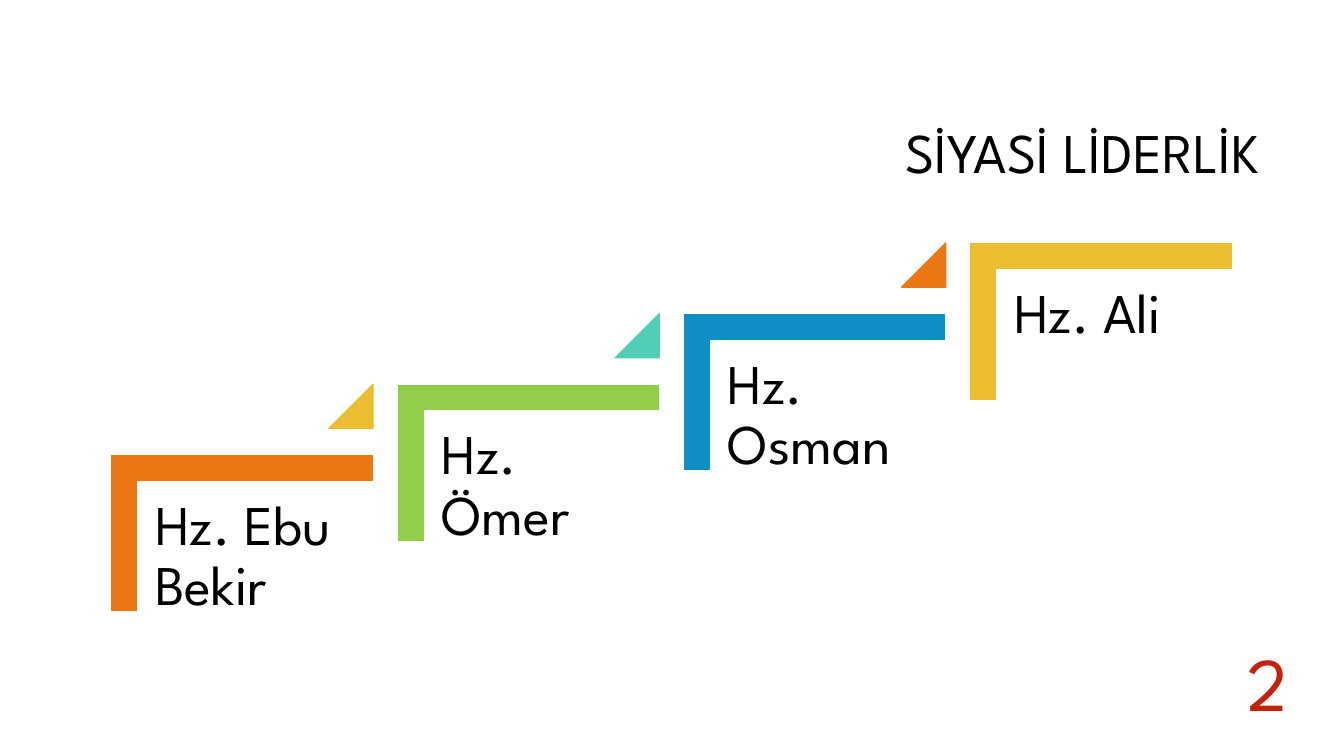
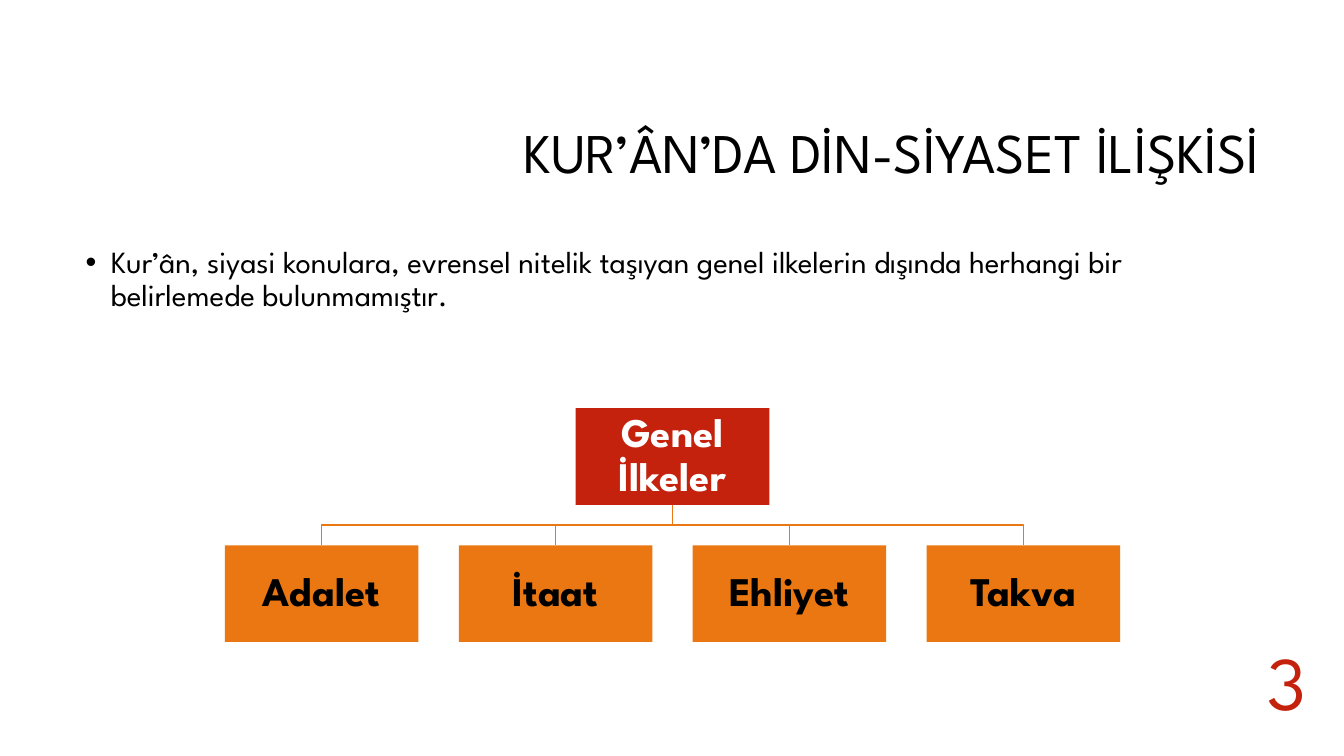
from dataclasses import dataclass

from lxml import etree
from pptx import Presentation
from pptx.dml.color import RGBColor
from pptx.enum.shapes import MSO_SHAPE
from pptx.enum.text import MSO_ANCHOR, MSO_AUTO_SIZE, PP_ALIGN
from pptx.oxml.ns import qn
from pptx.util import Pt

CORNER = MSO_SHAPE.CORNER
TRIANGLE = MSO_SHAPE.ISOSCELES_TRIANGLE
RECTANGLE = MSO_SHAPE.RECTANGLE
LEFT, CENTER, RIGHT = PP_ALIGN.LEFT, PP_ALIGN.CENTER, PP_ALIGN.RIGHT
TOP, MIDDLE = MSO_ANCHOR.TOP, MSO_ANCHOR.MIDDLE
NO_AUTOFIT, GROW = MSO_AUTO_SIZE.NONE, MSO_AUTO_SIZE.SHAPE_TO_FIT_TEXT

EMU_PER_PX = 9144  # 100 px to the inch
TITLE_ONLY, TITLE_AND_BODY = 5, 1


@dataclass(frozen=True)
class Theme:
    font: str = "League Spartan"
    black: str = "000000"
    white: str = "FFFFFF"
    red: str = "C4220D"
    orange: str = "EB7712"
    yellow: str = "ECBD31"
    green: str = "92CE4A"
    teal: str = "50CFB4"
    blue: str = "0D8EC5"
    title_size: int = 40
    body_size: int = 22
    node_size: int = 29
    number_size: int = 54
    line_spacing: float = 0.9


THEME = Theme()


def px(value):
    return int(value * EMU_PER_PX)


def rgb(value):
    return RGBColor.from_string(value)


def place(shape, left, top, width, height):
    shape.left, shape.top = px(left), px(top)
    shape.width, shape.height = px(width), px(height)


def write(shape, text, size, color=THEME.black, align=LEFT, anchor=TOP,
          bold=False, margin=None, spacing=THEME.line_spacing):
    frame = shape.text_frame
    frame.text = text
    frame.word_wrap = True
    frame.auto_size = NO_AUTOFIT
    frame.vertical_anchor = anchor
    if margin is not None:
        frame.margin_left = frame.margin_right = px(margin)
        frame.margin_top = frame.margin_bottom = px(margin)
    para = frame.paragraphs[0]
    para.alignment = align
    para.line_spacing = spacing
    para.space_before = Pt(0)
    for span in para.runs:
        span.font.name = THEME.font
        span.font.size = Pt(size)
        span.font.bold = bold
        span.font.color.rgb = rgb(color)


def add_text(page, box, text, size, **style):
    shape = page.shapes.add_textbox(*map(px, box))
    write(shape, text, size, **style)
    return shape


def add_block(page, preset, box, color, outlined=True):
    shape = page.shapes.add_shape(preset, *map(px, box))
    shape.shadow.inherit = False
    shape.fill.solid()
    shape.fill.fore_color.rgb = rgb(color)
    if outlined:
        shape.line.color.rgb = rgb(color)
        shape.line.width = Pt(0.75)
    else:
        shape.line.fill.background()
    return shape


def add_page(deck, layout, title, number, number_box):
    """Add a page with the shared title and the large page number."""
    page = deck.slides.add_slide(deck.slide_layouts[layout])
    heading = page.shapes.title
    place(heading, 317, 84, 942, 141)
    write(heading, title, THEME.title_size, align=RIGHT, anchor=MIDDLE)
    label = add_text(page, number_box, number, THEME.number_size,
                     color=THEME.red, align=CENTER, spacing=1.0)
    label.text_frame.word_wrap = False
    label.text_frame.auto_size = GROW
    return page


def add_step(page, left, top, name, color, marker):
    """Draw one stair whose visible bracket starts at left, top."""
    long_side, short_side = 258, 154
    shift = (long_side - short_side) // 2
    bracket = add_block(page, CORNER,
                        (left + shift, top - shift, short_side, long_side), color)
    bracket.rotation = 90
    bracket.adjustments[0] = bracket.adjustments[1] = 0.16
    add_text(page, (left + 26, top + 24, 232, 203), name, THEME.title_size, margin=17)
    if marker:
        triangle = add_block(page, TRIANGLE, (left + 215, top - 71, 44, 44), marker)
        triangle.adjustments[0] = 1


def add_staircase(page, left, top, steps):
    run, rise = 284, 70
    for index, (name, color, marker) in enumerate(steps):
        add_step(page, left + index * run, top - index * rise, name, color, marker)


def add_bullet_text(page, box, text):
    body = page.placeholders[1]
    place(body, *box)
    write(body, text, THEME.body_size)
    properties = body.text_frame.paragraphs[0]._p.get_or_add_pPr()
    properties.set("marL", str(px(25)))
    properties.set("indent", str(px(-25)))
    etree.SubElement(properties, qn("a:buChar")).set("char", "•")


def add_branch(page, start, end):
    (start_x, start_y), (end_x, end_y) = start, end
    middle = (start_y + end_y) // 2
    builder = page.shapes.build_freeform(start_x, start_y, scale=float(EMU_PER_PX))
    builder.add_line_segments([(start_x, middle), (end_x, middle), end], close=False)
    branch = builder.convert_to_shape()
    branch.shadow.inherit = False
    branch.fill.background()
    branch.line.color.rgb = rgb(THEME.orange)
    branch.line.width = Pt(1)


def add_node(page, box, text, fill, color):
    node = add_block(page, RECTANGLE, box, fill, outlined=False)
    write(node, text, THEME.node_size, color=color, align=CENTER, anchor=MIDDLE,
          bold=True, margin=2)


def add_tree(page, left, top, root, children):
    """Draw a root centred over an evenly spaced row of children."""
    width, height, gap = 192, 96, 40
    pitch = width + gap
    root_left = left + (len(children) - 1) * pitch // 2
    row_top = top + height + gap
    root_foot = (root_left + width // 2, top + height)
    lefts = [left + index * pitch for index in range(len(children))]
    for child_left in lefts:
        add_branch(page, root_foot, (child_left + width // 2, row_top))
    add_node(page, (root_left, top, width, height), root, THEME.red, THEME.white)
    for child_left, child in zip(lefts, children):
        add_node(page, (child_left, row_top, width, height), child,
                 THEME.orange, THEME.black)


def build_leaders(deck):
    page = add_page(deck, TITLE_ONLY, "SİYASİ LİDERLİK", "2", (1227, 626, 62, 101))
    add_staircase(page, 111, 452, [
        ("Hz. Ebu Bekir", THEME.orange, THEME.yellow),
        ("Hz. Ömer", THEME.green, THEME.teal),
        ("Hz. Osman", THEME.blue, THEME.orange),
        ("Hz. Ali", THEME.yellow, None),
    ])


def build_principles(deck):
    page = add_page(deck, TITLE_AND_BODY, "KUR’ÂN’DA DİN-SİYASET İLİŞKİSİ", "3",
                    (1245, 625, 62, 101))
    add_bullet_text(page, (75, 240, 1183, 91),
                    "Kur’ân, siyasi konulara, evrensel nitelik taşıyan genel ilkelerin "
                    "dışında herhangi bir belirlemede bulunmamıştır.")
    add_tree(page, 223, 405, "Genel İlkeler", ["Adalet", "İtaat", "Ehliyet", "Takva"])


def main():
    deck = Presentation()
    deck.slide_width, deck.slide_height = px(1333), px(750)
    build_leaders(deck)
    build_principles(deck)
    deck.save("out.pptx")


if __name__ == "__main__":
    main()
